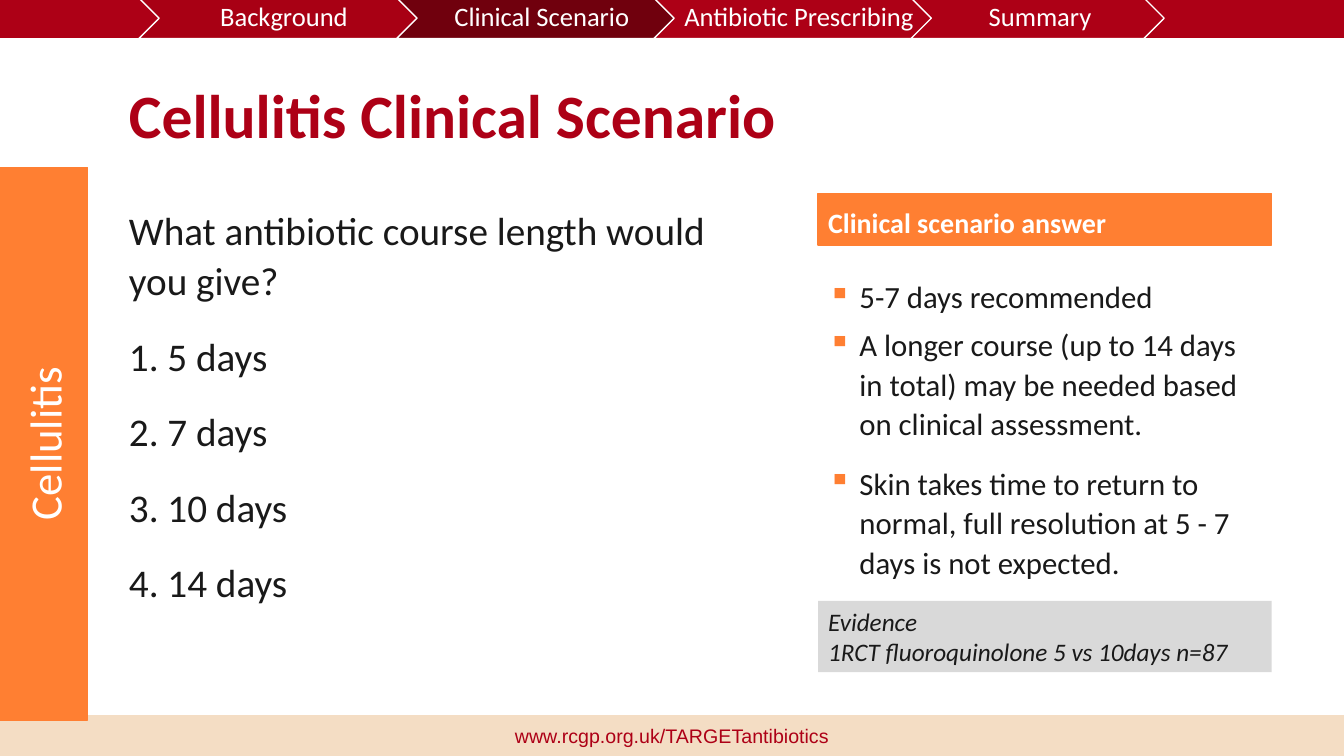
from lxml import etree
from pptx import Presentation
from pptx.dml.color import RGBColor
from pptx.enum.shapes import MSO_SHAPE
from pptx.enum.text import MSO_ANCHOR, MSO_AUTO_SIZE, PP_ALIGN
from pptx.oxml.ns import qn
from pptx.util import Cm, Pt

RECTANGLE, CHEVRON = MSO_SHAPE.RECTANGLE, MSO_SHAPE.CHEVRON
TOP, MIDDLE = MSO_ANCHOR.TOP, MSO_ANCHOR.MIDDLE
LEFT, CENTER = PP_ALIGN.LEFT, PP_ALIGN.CENTER
NO_AUTOFIT = MSO_AUTO_SIZE.NONE

COLORS = {
    "red": "AD0016",
    "first_red": "A80014",
    "dark_red": "70000D",
    "orange": "FF7F32",
    "sand": "F4DDC4",
    "grey": "D9D9D9",
    "ink": "191919",
    "white": "FFFFFF",
}
PAGE_WIDTH, PAGE_HEIGHT = 33.87, 19.05
PANEL_LEFT, PANEL_WIDTH = 20.62, 11.43

# Label, fill, left and width of each step
STEPS = [
    ("Background", "first_red", 3.5, 7.19),
    ("Clinical Scenario", "dark_red", 10, 7.19),
    ("Antibiotic Prescribing", "red", 16.48, 7.19),
    ("Summary", "red", 22.96, 6.38),
]
CHOICES = ["5 days", "7 days", "10 days", "14 days"]


def color(name):
    return RGBColor.from_string(COLORS[name])


def add_bullet(para, symbol=None, tint=None, hanging=0.0):
    """Give a paragraph a symbol, a number ("1.") or no bullet at all."""
    props = para._p.get_or_add_pPr()
    props.set("marL", str(Cm(hanging)))
    props.set("indent", str(-Cm(hanging)))
    if tint:
        holder = etree.SubElement(props, qn("a:buClr"))
        etree.SubElement(holder, qn("a:srgbClr"), val=COLORS[tint])
        etree.SubElement(props, qn("a:buSzPct"), val="103000")
    if symbol == "1.":
        etree.SubElement(props, qn("a:buAutoNum"), type="arabicPeriod")
    elif symbol:
        etree.SubElement(props, qn("a:buChar"), char=symbol)
    else:
        etree.SubElement(props, qn("a:buNone"))


def add_text(frame, text, first=False, size=18, tint="ink", font="Calibri", bold=False,
             italic=False, align=LEFT, spacing=1.0, before=0, after=0,
             symbol=None, symbol_tint=None, hanging=0.0):
    para = frame.paragraphs[0] if first else frame.add_paragraph()
    add_bullet(para, symbol, symbol_tint, hanging)
    para.alignment = align
    para.line_spacing = spacing
    para.space_before, para.space_after = Pt(before), Pt(after)
    span = para.add_run()
    span.text = text
    span.font.name, span.font.size = font, Pt(size)
    span.font.bold, span.font.italic = bold, italic
    span.font.color.rgb = color(tint)


def prepare_frame(box, anchor=TOP, margins=(0.25, 0.13, 0.25, 0.13)):
    frame = box.text_frame
    frame.word_wrap = True
    frame.auto_size = NO_AUTOFIT
    frame.vertical_anchor = anchor
    (frame.margin_left, frame.margin_top,
     frame.margin_right, frame.margin_bottom) = map(Cm, margins)
    return frame


def add_block(page, left, top, width, height, fill, line=None, kind=RECTANGLE):
    block = page.shapes.add_shape(kind, Cm(left), Cm(top), Cm(width), Cm(height))
    block.shadow.inherit = False
    block.fill.solid()
    block.fill.fore_color.rgb = color(fill)
    if line:
        block.line.color.rgb = color(line)
        block.line.width = Pt(1)
    else:
        block.line.fill.background()
    return block


def place(box, left, top, width, height):
    box.left, box.top, box.width, box.height = map(Cm, (left, top, width, height))


def add_frame_bars(page):
    footer = add_block(page, 0, 18.03, PAGE_WIDTH, 1.02, "sand", "sand")
    add_text(prepare_frame(footer, MIDDLE), "www.rcgp.org.uk/TARGETantibiotics", first=True,
             size=14, tint="red", font="Arial", align=CENTER)
    add_block(page, 0, 0, PAGE_WIDTH, 0.94, "red", "red")
    sidebar = add_block(page, 0, 4.22, 2.21, 13.92, "orange", "orange")
    frame = prepare_frame(sidebar, MIDDLE)
    frame._txBody.bodyPr.set("vert", "vert270")
    add_text(frame, "Cellulitis", first=True, size=32, tint="white", align=CENTER)


def add_steps(page):
    for label, fill, left, width in STEPS:
        step = add_block(page, left, -0.05, width, 1.02, fill, "white", CHEVRON)
        frame = prepare_frame(step, MIDDLE, (0.2, 0.08, 0.08, 0.08))
        add_text(frame, label, first=True, size=19, tint="white", align=CENTER, spacing=0.9)


def fill_question(page):
    title, body = page.shapes.title, page.placeholders[1]
    place(title, 3, 1.14, 25.65, 3.68)
    add_text(prepare_frame(title, MIDDLE), "Cellulitis Clinical Scenario", first=True,
             size=44, tint="red", bold=True, spacing=0.9)
    place(body, 3, 4.98, 15.09, 10.41)
    frame = prepare_frame(body)
    add_text(frame, "What antibiotic course length would you give?", first=True,
             size=28, spacing=1.07, after=8)
    for choice in CHOICES:
        add_text(frame, choice, size=28, spacing=1.07, before=10, after=8,
                 symbol="1.", hanging=0.97)


def add_answer(page):
    header = add_block(page, PANEL_LEFT, 4.88, PANEL_WIDTH, 1.3, "orange", "orange")
    frame = prepare_frame(header, MIDDLE, (0.25, 0.25, 0.25, 0.13))
    add_text(frame, "Clinical scenario answer", first=True, size=20, tint="white", bold=True)

    answer = page.shapes.add_textbox(Cm(PANEL_LEFT), Cm(6.88), Cm(PANEL_WIDTH), Cm(8.2))
    frame = prepare_frame(answer)
    bullet = {"size": 22, "symbol": "▪", "symbol_tint": "orange", "hanging": 0.79}
    add_text(frame, "5-7 days recommended", first=True, **bullet)
    for point in (
        "A longer course (up to 14 days in total) may be needed based on clinical assessment.",
        "Skin takes time to return to normal, full resolution at 5 - 7 days is not expected.",
    ):
        add_text(frame, point, spacing=1.07, before=6, after=8, **bullet)

    evidence = add_block(page, PANEL_LEFT, 15.14, PANEL_WIDTH, 1.8, "grey")
    frame = prepare_frame(evidence)
    add_text(frame, "Evidence", first=True, italic=True)
    add_text(frame, "1RCT fluoroquinolone 5 vs 10days n=87", italic=True)


def main():
    deck = Presentation()
    deck.slide_width, deck.slide_height = Cm(PAGE_WIDTH), Cm(PAGE_HEIGHT)
    page = deck.slides.add_slide(deck.slide_layouts[1])
    add_frame_bars(page)
    fill_question(page)
    add_answer(page)
    add_steps(page)
    deck.save("out.pptx")


if __name__ == "__main__":
    main()
